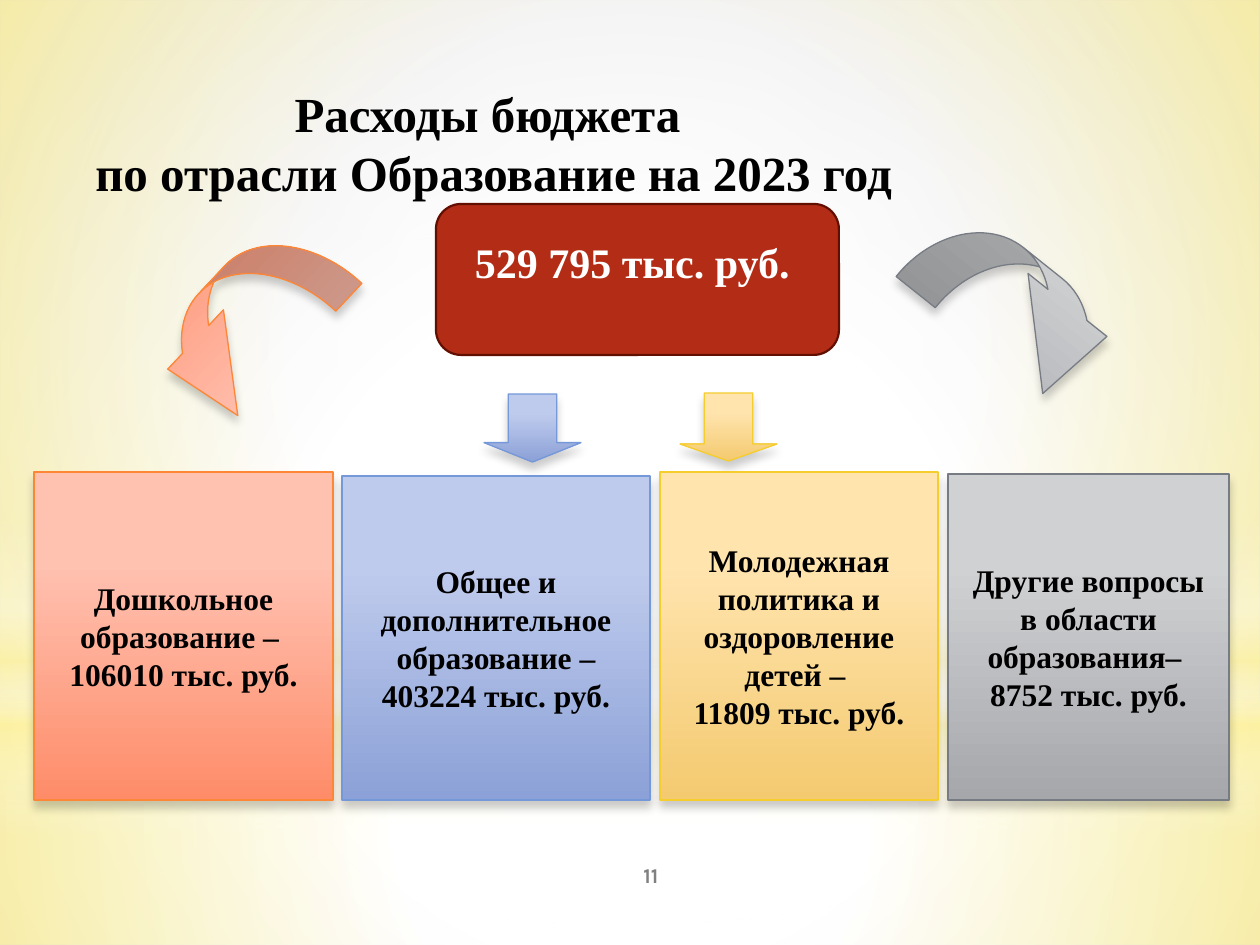
import lxml.etree
import pptx
import pptx.dml.color
import pptx.enum.shapes
import pptx.enum.text
import pptx.oxml
import pptx.oxml.ns
import pptx.util

RGB = pptx.dml.color.RGBColor
SHAPE = pptx.enum.shapes.MSO_SHAPE
ANCHOR = pptx.enum.text.MSO_ANCHOR
ALIGN = pptx.enum.text.PP_ALIGN
SERIF = "Times New Roman"

WHITE = RGB(0xFF, 0xFF, 0xFF)
BLACK = RGB(0x00, 0x00, 0x00)
GREY = RGB(0x80, 0x80, 0x80)
MIST = RGB(0xD1, 0xD1, 0xD1)
CREAM = RGB(0xFF, 0xF3, 0x9D)
RED = RGB(0xB3, 0x2C, 0x16)
DARK_RED = RGB(0x61, 0x0F, 0x01)
CORAL = (RGB(0xFF, 0xC1, 0xB0), RGB(0xFE, 0x8C, 0x69), RGB(0xFE, 0x86, 0x37))
BLUE = (RGB(0xBF, 0xCB, 0xED), RGB(0x8C, 0xA1, 0xD7), RGB(0x75, 0x98, 0xD9))
AMBER = (RGB(0xFF, 0xE4, 0xAE), RGB(0xF4, 0xCA, 0x70), RGB(0xF5, 0xCD, 0x2D))
SILVER = (RGB(0xD0, 0xD1, 0xD3), RGB(0xA5, 0xA7, 0xAB), RGB(0x77, 0x7C, 0x84))

CENTRE = (50, 50, 50, 50)
BRANCHES = [
    ((34, 472, 299, 328), CORAL,
     ["Дошкольное образование – ", "106010 тыс. руб."],
     SHAPE.CURVED_UP_ARROW, (100, -202, 222, 112), (0.34, 0.727, 0.74), 133.2),
    ((342, 476, 308, 324), BLUE,
     ["Общее и дополнительное", "образование – 403224 тыс. руб."],
     SHAPE.DOWN_ARROW, (142, -82, 97, 68), (0.5, 0.285), 0),
    ((660, 472, 278, 328), AMBER,
     ["Молодежная политика и оздоровление детей – ", "11809 тыс. руб."],
     SHAPE.DOWN_ARROW, (20, -79, 97, 68), (0.5, 0.25), 0),
    ((948, 474, 281, 326), SILVER,
     ["Другие вопросы в области образования– ", "8752 тыс. руб."],
     SHAPE.CURVED_DOWN_ARROW, (-46, -214, 238, 102), (0.49, 0.99, 0.83), 38.6),
]


def px(n):
    """Turn pixels into EMU."""
    return pptx.util.Emu(round(n * 914400 / 126))


def gradient(fill, parent, stops, focus=None):
    """Fill with (position, colour, opacity) stops, circular when focus is given."""
    fill.solid()
    gs = "".join(
        f'<a:gs pos="{pos * 1000}"><a:srgbClr val="{color}">'
        f'<a:alpha val="{alpha * 1000}"/></a:srgbClr></a:gs>'
        for pos, color, alpha in stops)
    way = '<a:lin ang="5400000" scaled="0"/>'
    if focus:
        sides = " ".join(f'{k}="{v * 1000}"' for k, v in zip("ltrb", focus))
        way = f'<a:path path="circle"><a:fillToRect {sides}/></a:path>'
    xml = (f'<a:gradFill {pptx.oxml.ns.nsdecls("a")} rotWithShape="1">'
           f'<a:gsLst>{gs}</a:gsLst>{way}</a:gradFill>')
    old = parent.find(pptx.oxml.ns.qn("a:solidFill"))
    parent.replace(old, pptx.oxml.parse_xml(xml))


def add_shape(s, kind, box):
    """Add a shadowless preset shape."""
    sp = s.shapes.add_shape(kind, *map(px, box))
    sp.shadow.inherit = False
    return sp


def add_run(p, text, size, color, font=SERIF):
    """Add a bold run to a centred paragraph."""
    p.alignment = ALIGN.CENTER
    r = p.add_run()
    r.text = text
    r.font.name, r.font.size, r.font.bold = font, pptx.util.Pt(size), True
    r.font.color.rgb = color


def set_frame(tf, anchor, left, top, bottom):
    """Set wrapping, anchor and insets of a text frame."""
    tf.word_wrap = True
    tf.vertical_anchor = anchor
    tf.margin_left = tf.margin_right = px(left)
    tf.margin_top, tf.margin_bottom = px(top), px(bottom)


def backdrop(s, box):
    """Paint the background and its translucent glows."""
    x, y, w, h = box
    fill = s.background.fill
    fill.solid()
    bg = s.element.find(".//" + pptx.oxml.ns.qn("p:bgPr"))
    gradient(fill, bg, [(0, WHITE, 100), (42, WHITE, 100), (100, MIST, 100)],
             (24, 44, 24, 12))
    glows = [
        (SHAPE.RECTANGLE, 703, h - 703, CENTRE,
         [(0, WHITE, 91), (37, WHITE, 76), (100, CREAM, 79)]),
        (SHAPE.RECTANGLE, 0, 703, CENTRE,
         [(0, WHITE, 89), (48, WHITE, 62), (100, CREAM, 79)]),
        (SHAPE.RECTANGLE, 519, 315, None,
         [(0, WHITE, 0), (29, WHITE, 30), (45, CREAM, 40),
          (55, WHITE, 26), (65, CREAM, 60), (100, WHITE, 0)]),
        (SHAPE.OVAL, 221, 703, CENTRE, [(0, WHITE, 100), (56, WHITE, 0)]),
    ]
    for kind, top, height, focus, stops in glows:
        sp = add_shape(s, kind, (x, y + top, w, height))
        gradient(sp.fill, sp.element.spPr, stops, focus)
        sp.line.fill.background()


def heading(s, box):
    """Place the title in front of the backdrop."""
    sp = s.shapes.title
    sp.element.getparent().append(sp.element)
    sp.left, sp.top, sp.width, sp.height = map(px, box)
    set_frame(sp.text_frame, ANCHOR.BOTTOM, 12, 6, 6)
    p = sp.text_frame.paragraphs[0]
    add_run(p, "Расходы бюджета ", 28, BLACK)
    p.add_line_break()
    add_run(p, "по отрасли Образование на 2023 год", 28, BLACK)


def total(s, box):
    """Draw the rounded box with the total."""
    sp = add_shape(s, SHAPE.ROUNDED_RECTANGLE, box)
    sp.fill.solid()
    sp.fill.fore_color.rgb = RED
    sp.line.color.rgb = DARK_RED
    sp.line.width = pptx.util.Pt(1.25)
    set_frame(sp.text_frame, ANCHOR.MIDDLE, 18, 6, 42)
    add_run(sp.text_frame.paragraphs[0], "529 795 тыс. руб. ", 24, WHITE)


def tinted(s, kind, box, tint):
    """Add a shape with a tinted gradient, outline and soft shadow."""
    light, deep, edge = tint
    sp = add_shape(s, kind, box)
    gradient(sp.fill, sp.element.spPr, [(28, light, 100), (100, deep, 100)])
    sp.line.color.rgb = edge
    sp.line.width = pptx.util.Pt(0.75)
    effects = sp.element.spPr.find(pptx.oxml.ns.qn("a:effectLst"))
    effects.append(pptx.oxml.parse_xml(
        f'<a:outerShdw {pptx.oxml.ns.nsdecls("a")} blurRad="{pptx.util.Pt(5)}" '
        f'dist="{pptx.util.Pt(4)}" dir="5400000" rotWithShape="0">'
        f'<a:srgbClr val="{BLACK}"><a:alpha val="20000"/></a:srgbClr></a:outerShdw>'))
    return sp


def branch(s, box, tint, lines, kind, offset, adjustments, rotation):
    """Draw one spending card and the arrow above it."""
    x, y, w, h = box
    dx, dy, aw, ah = offset
    arrow = tinted(s, kind, (x + dx, y + dy, aw, ah), tint)
    arrow.rotation = rotation
    for i, value in enumerate(adjustments):
        arrow.adjustments[i] = value
    tf = tinted(s, SHAPE.RECTANGLE, box, tint).text_frame
    set_frame(tf, ANCHOR.MIDDLE, 15, 0, 0)
    for i, line in enumerate(lines):
        p = tf.add_paragraph() if i else tf.paragraphs[0]
        add_run(p, line, 18, BLACK)


def page_number(s, box):
    """Place the page number."""
    tf = s.shapes.add_textbox(*map(px, box)).text_frame
    set_frame(tf, ANCHOR.MIDDLE, 12, 6, 6)
    add_run(tf.paragraphs[0], "11", 12, GREY, "Karla")


def main():
    """Build the slide."""
    prs = pptx.Presentation()
    prs.slide_width, prs.slide_height = px(1260), px(945)
    s = prs.slides.add_slide(prs.slide_layouts[5])
    backdrop(s, (0, 0, 1260, 945))
    total(s, (436, 204, 403, 151))
    for item in BRANCHES:
        branch(s, *item)
    page_number(s, (525, 850, 252, 50))
    heading(s, (69, 76, 849, 131))
    prs.save("out.pptx")


if __name__ == "__main__":
    main()
